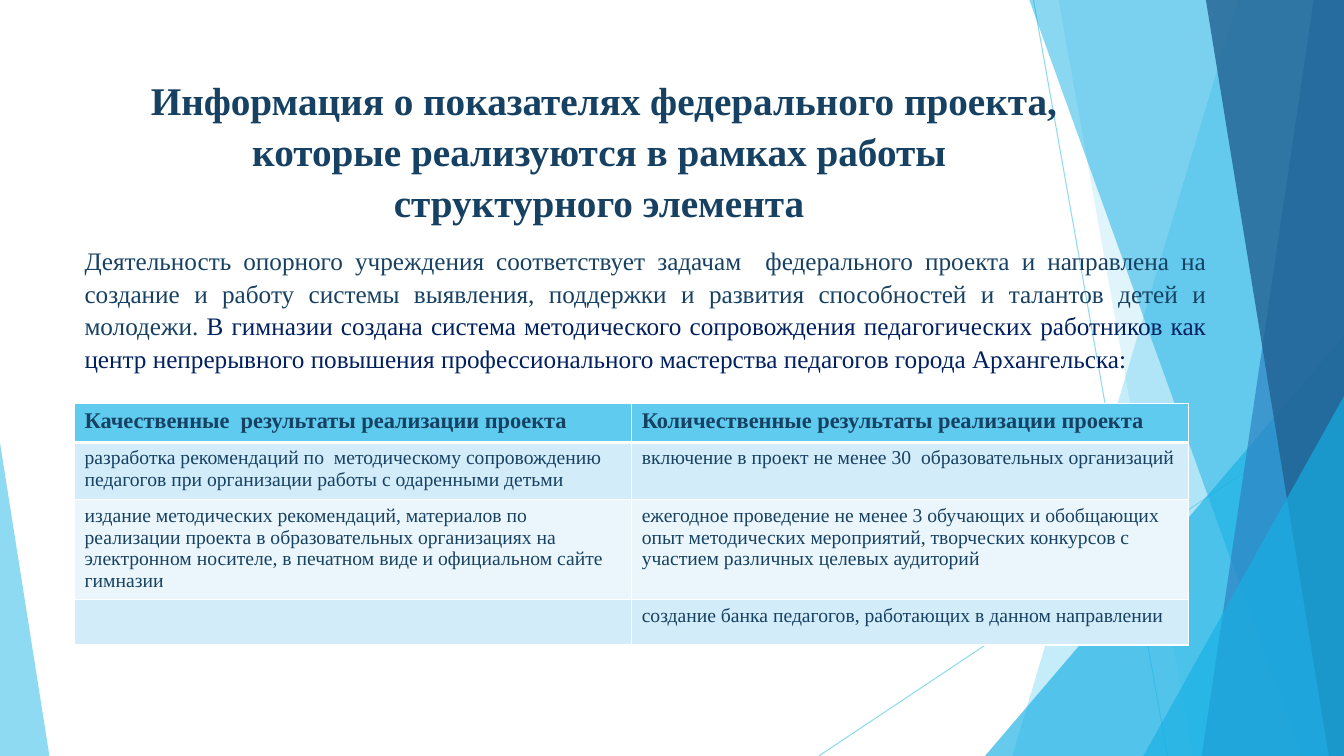
import pptx
import pptx.dml.color
import pptx.enum.shapes
import pptx.enum.text
import pptx.oxml.ns
import pptx.util
from lxml import etree

FONT = "Times New Roman"
WHITE, SKY, CYAN, BLUE, NAVY = "FFFFFF", "5FCBEF", "17B0E4", "2E83C3", "226292"
INK, DEEP_INK = "174162", "002060"
ROW_TINTS = ("D2ECF9", "EAF6FC")
LEFT = 5.55
LINE_SPACING = 1.08
ALIGN = pptx.enum.text.PP_ALIGN

HEADING = (
    "Информация о показателях федерального проекта, которые реализуются в рамках работы ",
    "структурного элемента ",
)
INTRO = (
    ("Деятельность опорного учреждения соответствует задачам  федерального проекта и "
     "направлена на создание и работу системы выявления, поддержки и развития "
     "способностей и талантов детей и молодежи. ", INK),
    ("В гимназии создана система методического сопровождения педагогических работников "
     "как центр непрерывного повышения профессионального мастерства педагогов города "
     "Архангельска:", DEEP_INK),
)
RESULTS = (
    ("Качественные  результаты реализации проекта",
     "Количественные результаты реализации проекта"),
    ("разработка рекомендаций по  методическому сопровождению педагогов при организации "
     "работы с одаренными детьми",
     "включение в проект не менее 30  образовательных организаций"),
    ("издание методических рекомендаций, материалов по реализации проекта в "
     "образовательных организациях на электронном носителе, в печатном виде и "
     "официальном сайте гимназии",
     "ежегодное проведение не менее 3 обучающих и обобщающих опыт методических "
     "мероприятий, творческих конкурсов с участием различных целевых аудиторий"),
    ("", "создание банка педагогов, работающих в данном направлении"),
)
ROW_HEIGHTS = (5.2, 7.6, 13.2, 6)


def rgb(color):
    return pptx.dml.color.RGBColor.from_string(color)


def add_xml(parent, tag, **attributes):
    return etree.SubElement(parent, pptx.oxml.ns.qn(tag), attributes)


class FacetSlide:
    """Draws on one slide; every length is a percentage of its width or height."""

    def __init__(self, deck):
        self.width, self.height = deck.slide_width, deck.slide_height
        self.slide = deck.slides.add_slide(deck.slide_layouts[5])
        self.shapes = self.slide.shapes

    def x(self, share):
        return round(self.width * share / 100)

    def y(self, share):
        return round(self.height * share / 100)

    def box(self, left, top, width, height):
        return self.x(left), self.y(top), self.x(width), self.y(height)

    def set_opacity(self, fill, opacity):
        color = fill._xPr.find(".//" + pptx.oxml.ns.qn("a:srgbClr"))
        add_xml(color, "a:alpha", val=str(opacity * 1000))

    def tint(self, shape, color, opacity):
        shape.shadow.inherit = False
        shape.fill.solid()
        shape.fill.fore_color.rgb = rgb(color)
        self.set_opacity(shape.fill, opacity)
        shape.line.fill.background()

    def thin_line(self, x1, y1, x2, y2):
        line = self.shapes.add_connector(
            pptx.enum.shapes.MSO_CONNECTOR.STRAIGHT,
            self.x(x1), self.y(y1), self.x(x2), self.y(y2))
        line.line.width = pptx.util.Pt(0.75)
        line.line.color.rgb = rgb(SKY)
        self.set_opacity(line.line.fill, 70)
        add_xml(line._element.spPr, "a:effectLst")

    def band(self, top_x, bottom_x, color, opacity):
        """Fill from a slanted left edge to the right side of the slide."""
        outline = self.shapes.build_freeform(self.x(top_x), 0)
        outline.add_line_segments([
            (self.width, 0), (self.width, self.height), (self.x(bottom_x), self.height)])
        self.tint(outline.convert_to_shape(), color, opacity)

    def corner(self, left, top, width, apex, color, opacity):
        """Right triangle standing on the bottom edge of the slide."""
        triangle = self.shapes.add_shape(
            pptx.enum.shapes.MSO_SHAPE.ISOSCELES_TRIANGLE,
            *self.box(left, top, width, 100 - top))
        triangle.adjustments[0] = apex
        self.tint(triangle, color, opacity)

    def run(self, paragraph, text, size, color=INK, bold=False):
        font_run = paragraph.add_run()
        font_run.text = text
        font = font_run.font
        font.name, font.size, font.bold = FONT, pptx.util.Pt(size), bold
        font.color.rgb = rgb(color)

    def frame_paragraph(self, shape, align):
        frame = shape.text_frame
        frame.word_wrap = True
        frame.auto_size = pptx.enum.text.MSO_AUTO_SIZE.NONE
        frame.vertical_anchor = pptx.enum.text.MSO_ANCHOR.TOP
        paragraph = frame.paragraphs[0]
        paragraph.alignment = align
        paragraph.line_spacing = LINE_SPACING
        return paragraph

    def title(self, lines, *place):
        heading = self.shapes.title
        heading.left, heading.top, heading.width, heading.height = self.box(*place)
        self.shapes._spTree.append(heading._element)  # bring in front of the bands
        paragraph = self.frame_paragraph(heading, ALIGN.CENTER)
        for number, text in enumerate(lines):
            if number:
                paragraph.add_line_break()
            self.run(paragraph, text, 28, bold=True)

    def body(self, runs, *place):
        intro = self.shapes.add_textbox(*self.box(*place))
        paragraph = self.frame_paragraph(intro, ALIGN.JUSTIFY)
        paragraph.space_before = pptx.util.Pt(10)
        for text, color in runs:
            self.run(paragraph, text, 18, color)

    def cell_borders(self, cell, row):
        widths = {"L": 1, "R": 1, "T": 3 if row == 1 else 1, "B": 3 if row == 0 else 1}
        properties = cell._tc.get_or_add_tcPr()
        for side, points in widths.items():
            edge = add_xml(properties, "a:ln" + side, w=str(pptx.util.Pt(points)))
            add_xml(add_xml(edge, "a:solidFill"), "a:srgbClr", val=WHITE)

    def table(self, rows, heights, left, top, width):
        results = self.shapes.add_table(
            len(rows), len(rows[0]), *self.box(left, top, width, sum(heights))).table
        for row, (texts, height) in enumerate(zip(rows, heights)):
            results.rows[row].height = self.y(height)
            for column, text in enumerate(texts):
                cell = results.cell(row, column)
                self.cell_borders(cell, row)
                cell.fill.solid()
                cell.fill.fore_color.rgb = rgb(ROW_TINTS[(row - 1) % 2] if row else SKY)
                if text:
                    self.run(cell.text_frame.paragraphs[0], text,
                             14 if row else 16, bold=row == 0)


def main():
    deck = pptx.Presentation()
    deck.slide_width = pptx.util.Inches(13.33)
    deck.slide_height = pptx.util.Inches(7.5)
    page = FacetSlide(deck)

    page.thin_line(76.9, 0, 86.87, 100)
    page.thin_line(100, 53.73, 60.92, 100)
    page.band(92.12, 75.32, SKY, 36)
    page.band(78.77, 88.75, SKY, 20)
    page.corner(73.29, 44.4, 26.71, 1, CYAN, 66)
    page.band(76.59, 96.85, CYAN, 50)
    page.band(97.75, 89.42, BLUE, 70)
    page.band(89.72, 98.87, NAVY, 80)
    page.corner(85.07, 52.4, 14.93, 1, CYAN, 66)
    page.corner(0, 58.53, 3.68, 0, SKY, 70)

    page.title(HEADING, LEFT, 8.93, 78.77, 19.2)
    page.body(INTRO, LEFT, 31.47, 85, 56.53)
    page.table(RESULTS, ROW_HEIGHTS, LEFT, 53.33, 82.9)
    deck.save("out.pptx")


if __name__ == "__main__":
    main()
